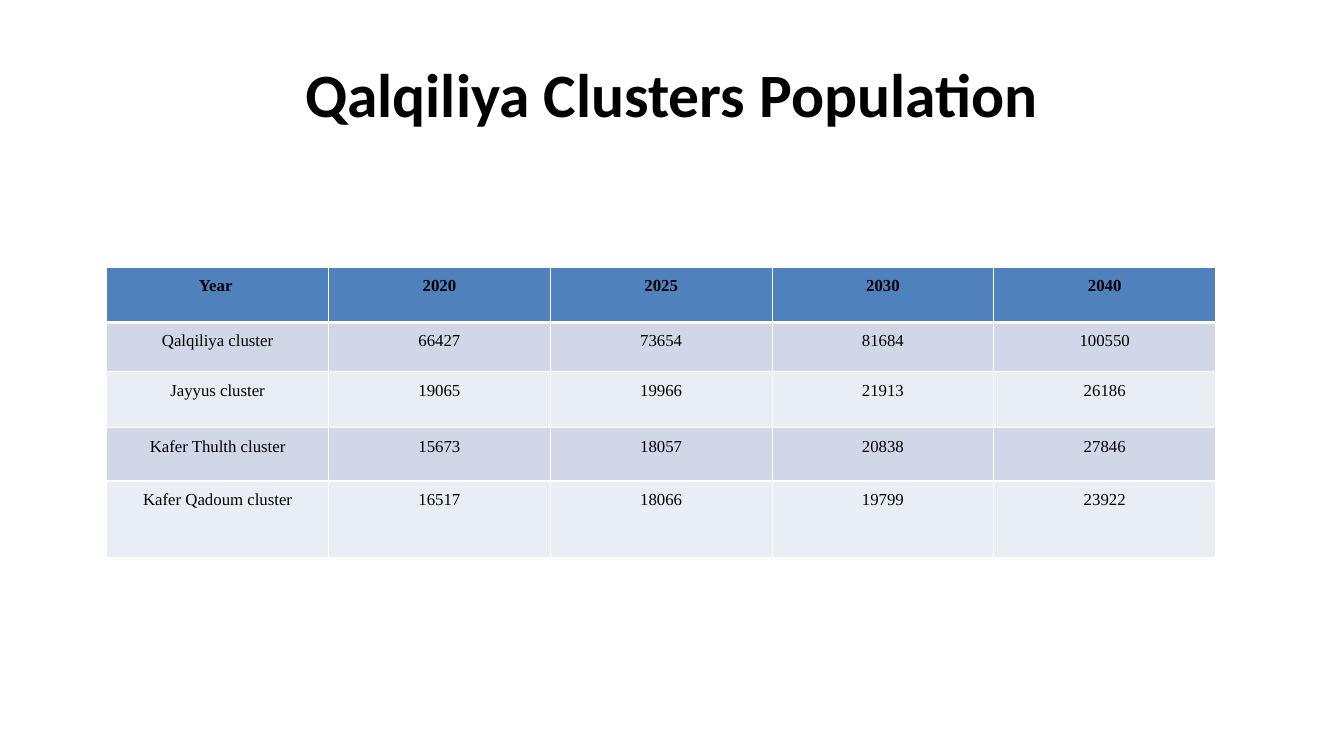
from dataclasses import dataclass

from lxml import etree
from pptx import Presentation
from pptx import util as u
from pptx.dml.color import RGBColor
from pptx.enum import text as t
from pptx.oxml.ns import qn


@dataclass(frozen=True)
class TableRow:
    height: float
    fill: str
    values: tuple[str, ...]
    bold: bool = False


HEADER_FILL, DARK_BAND, LIGHT_BAND = "4F81BD", "D0D8E8", "E9EDF4"
COLUMN_WIDTH = 158.4
ROWS = [
    TableRow(39.6, HEADER_FILL, ("Year ", "2020", "2025", "2030", "2040"), bold=True),
    TableRow(35.2, DARK_BAND, ("Qalqiliya cluster", "66427", "73654", "81684", "100550")),
    TableRow(40, LIGHT_BAND, ("Jayyus cluster", "19065", "19966", "21913", "26186")),
    TableRow(38, DARK_BAND, ("Kafer Thulth cluster", "15673", "18057", "20838", "27846")),
    TableRow(54.7, LIGHT_BAND, ("Kafer Qadoum cluster", "16517", "18066", "19799", "23922")),
]


def color(value: str) -> RGBColor:
    return RGBColor.from_string(value)


def write(frame, text: str, *, font: str, size: float, bold: bool = False,
          spacing: float = 1.0) -> None:
    para = frame.paragraphs[0]
    para.alignment = t.PP_ALIGN.CENTER
    para.line_spacing = spacing
    span = para.add_run()
    span.text = text
    span.font.name = font
    span.font.size = u.Pt(size)
    span.font.bold = bold
    span.font.color.rgb = color("000000")


def add_border(cell, side: str, width: float) -> None:
    line = etree.SubElement(cell._tc.get_or_add_tcPr(), qn(f"a:ln{side}"), w=str(u.Pt(width)))
    fill = etree.SubElement(line, qn("a:solidFill"))
    etree.SubElement(fill, qn("a:srgbClr"), val="FFFFFF")


def fill_cell(cell, text: str, row: TableRow, top: float, bottom: float) -> None:
    cell.margin_left = cell.margin_right = u.Pt(5)
    cell.margin_top = cell.margin_bottom = u.Pt(0)
    for side, width in (("L", 1), ("R", 1), ("T", top), ("B", bottom)):
        add_border(cell, side, width)
    cell.fill.solid()
    cell.fill.fore_color.rgb = color(row.fill)
    write(cell.text_frame, text, font="Times New Roman", size=12, bold=row.bold, spacing=1.5)


def add_title(page) -> None:
    box = page.shapes.add_textbox(u.Pt(48), u.Pt(21.6), u.Pt(864), u.Pt(90))
    box.text_frame.word_wrap = True
    box.text_frame.vertical_anchor = t.MSO_ANCHOR.MIDDLE
    write(box.text_frame, "Qalqiliya Clusters Population", font="Calibri", size=44, bold=True)


def add_population_table(page) -> None:
    columns = len(ROWS[0].values)
    table = page.shapes.add_table(
        len(ROWS), columns, u.Pt(76.3), u.Pt(190.8),
        u.Pt(COLUMN_WIDTH * columns), u.Pt(sum(row.height for row in ROWS))).table
    for column in table.columns:
        column.width = u.Pt(COLUMN_WIDTH)
    for index, row in enumerate(ROWS):
        table.rows[index].height = u.Pt(row.height)
        # A thick rule separates the header from the body
        top, bottom = (3 if index == 1 else 1), (3 if index == 0 else 1)
        for cell, value in zip(table.rows[index].cells, row.values):
            fill_cell(cell, value, row, top, bottom)


def main() -> None:
    deck = Presentation()
    deck.slide_width, deck.slide_height = u.Pt(960), u.Pt(540)
    page = deck.slides.add_slide(deck.slide_layouts[6])
    add_title(page)
    add_population_table(page)
    deck.save("out.pptx")


if __name__ == "__main__":
    main()
